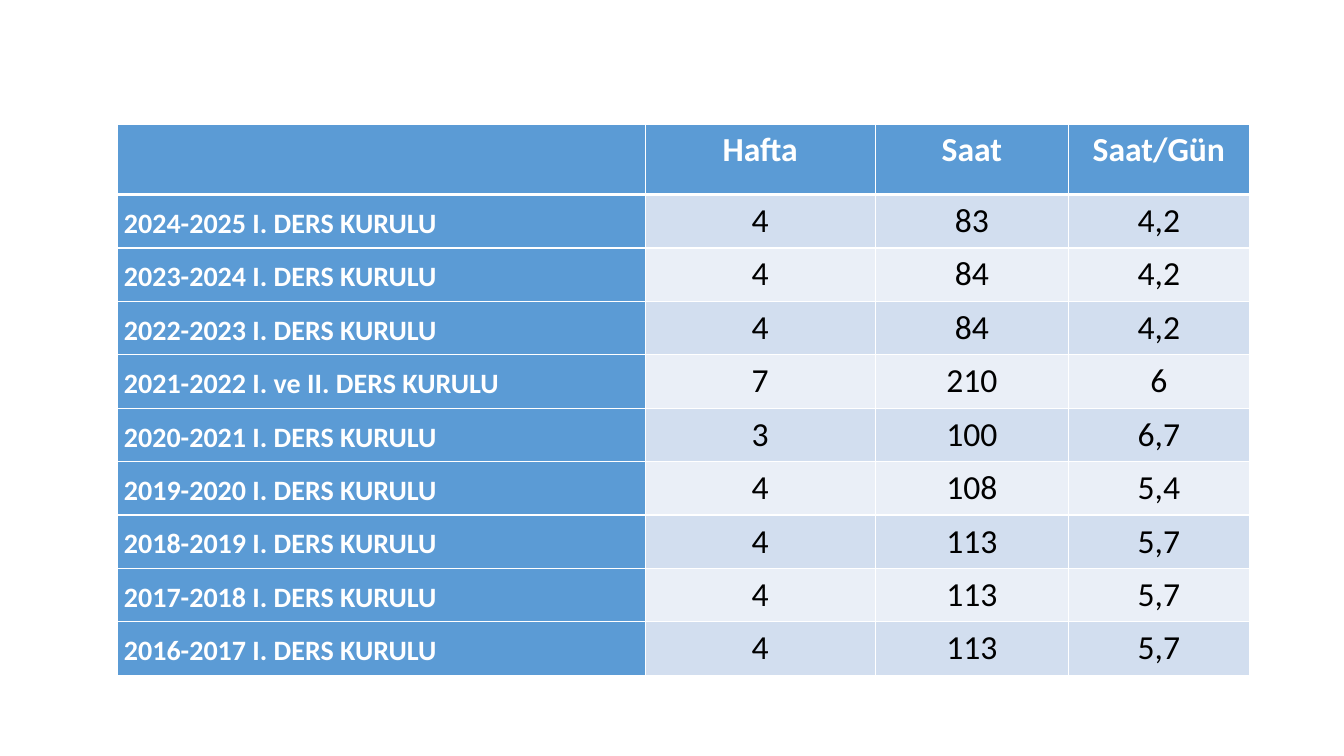
from dataclasses import dataclass

from lxml.etree import SubElement
from pptx import Presentation
from pptx.dml.color import RGBColor
from pptx.enum.text import MSO_VERTICAL_ANCHOR as Anchor, PP_PARAGRAPH_ALIGNMENT as Align
from pptx.oxml.ns import qn
from pptx.table import Table, _Cell as Cell
from pptx.util import Inches, Pt

COLORS = {
    "header": "5B9BD5",
    "odd_row": "D2DEEF",
    "even_row": "EAEFF7",
    "white": "FFFFFF",
    "black": "000000",
}
FONT = "Calibri"
COLUMN_WIDTHS = (5.24, 2.28, 1.92, 1.79)
HEADER_HEIGHT = 0.7
ROW_HEIGHT = 0.53
HEADINGS = ("", "Hafta", "Saat", "Saat/Gün")


@dataclass(frozen=True)
class Committee:
    title: str
    weeks: str
    hours: str
    hours_per_day: str


COMMITTEES = (
    Committee("2024-2025 I. DERS KURULU", "4", "83", "4,2"),
    Committee("2023-2024 I. DERS KURULU", "4", "84", "4,2"),
    Committee("2022-2023 I. DERS KURULU", "4", "84", "4,2"),
    Committee("2021-2022 I. ve II. DERS KURULU", "7", "210", "6"),
    Committee("2020-2021 I. DERS KURULU", "3", "100", "6,7"),
    Committee("2019-2020 I. DERS KURULU", "4", "108", "5,4"),
    Committee("2018-2019 I. DERS KURULU", "4", "113", "5,7"),
    Committee("2017-2018 I. DERS KURULU", "4", "113", "5,7"),
    Committee("2016-2017 I. DERS KURULU", "4", "113", "5,7"),
)


def set_borders(cell: Cell, top: float = 1, bottom: float = 1) -> None:
    properties = cell._tc.get_or_add_tcPr()
    for side, width in (("L", 1), ("R", 1), ("T", top), ("B", bottom)):
        line = SubElement(properties, qn(f"a:ln{side}"), w=str(Pt(width)))
        fill = SubElement(line, qn("a:solidFill"))
        SubElement(fill, qn("a:srgbClr"), val=COLORS["white"])


def set_fill(cell: Cell, color: str) -> None:
    cell.fill.solid()
    cell.fill.fore_color.rgb = RGBColor.from_string(COLORS[color])


def write_text(cell: Cell, text: str, *, size: float = 24, color: str = "white",
               bold: bool = True, align: Align = Align.CENTER,
               anchor: Anchor = Anchor.TOP) -> None:
    cell.margin_left = cell.margin_right = Inches(0.07)
    cell.margin_top = cell.margin_bottom = Inches(0)
    cell.vertical_anchor = anchor
    paragraph = cell.text_frame.paragraphs[0]
    paragraph.alignment = align
    paragraph.line_spacing = 1.15
    if not text:
        return
    run = paragraph.add_run()
    run.text = text
    run.font.name = FONT
    run.font.size = Pt(size)
    run.font.bold = bold
    run.font.color.rgb = RGBColor.from_string(COLORS[color])


def draw_header(table: Table) -> None:
    for column, heading in enumerate(HEADINGS):
        cell = table.cell(0, column)
        set_borders(cell, bottom=3)
        set_fill(cell, "header")
        write_text(cell, heading)


def draw_committee(table: Table, row: int, committee: Committee) -> None:
    values = (committee.title, committee.weeks, committee.hours, committee.hours_per_day)
    band = "odd_row" if row % 2 else "even_row"
    for column, value in enumerate(values):
        cell = table.cell(row, column)
        set_borders(cell, top=3 if row == 1 else 1)
        if column == 0:
            set_fill(cell, "header")
            write_text(cell, value, size=20, align=Align.JUSTIFY, anchor=Anchor.MIDDLE)
        else:
            set_fill(cell, band)
            write_text(cell, value, color="black", bold=False)


def main() -> None:
    presentation = Presentation()
    presentation.slide_width = Inches(13.33)
    presentation.slide_height = Inches(7.5)
    slide = presentation.slides.add_slide(presentation.slide_layouts[6])

    heights = [HEADER_HEIGHT] + [ROW_HEIGHT] * len(COMMITTEES)
    shape = slide.shapes.add_table(
        len(heights), len(COLUMN_WIDTHS), Inches(1.16), Inches(1.23),
        Inches(sum(COLUMN_WIDTHS)), Inches(sum(heights)))
    table = shape.table
    for column, width in zip(table.columns, COLUMN_WIDTHS):
        column.width = Inches(width)
    for row, height in zip(table.rows, heights):
        row.height = Inches(height)

    draw_header(table)
    for row, committee in enumerate(COMMITTEES, start=1):
        draw_committee(table, row, committee)

    presentation.save("out.pptx")


if __name__ == "__main__":
    main()
